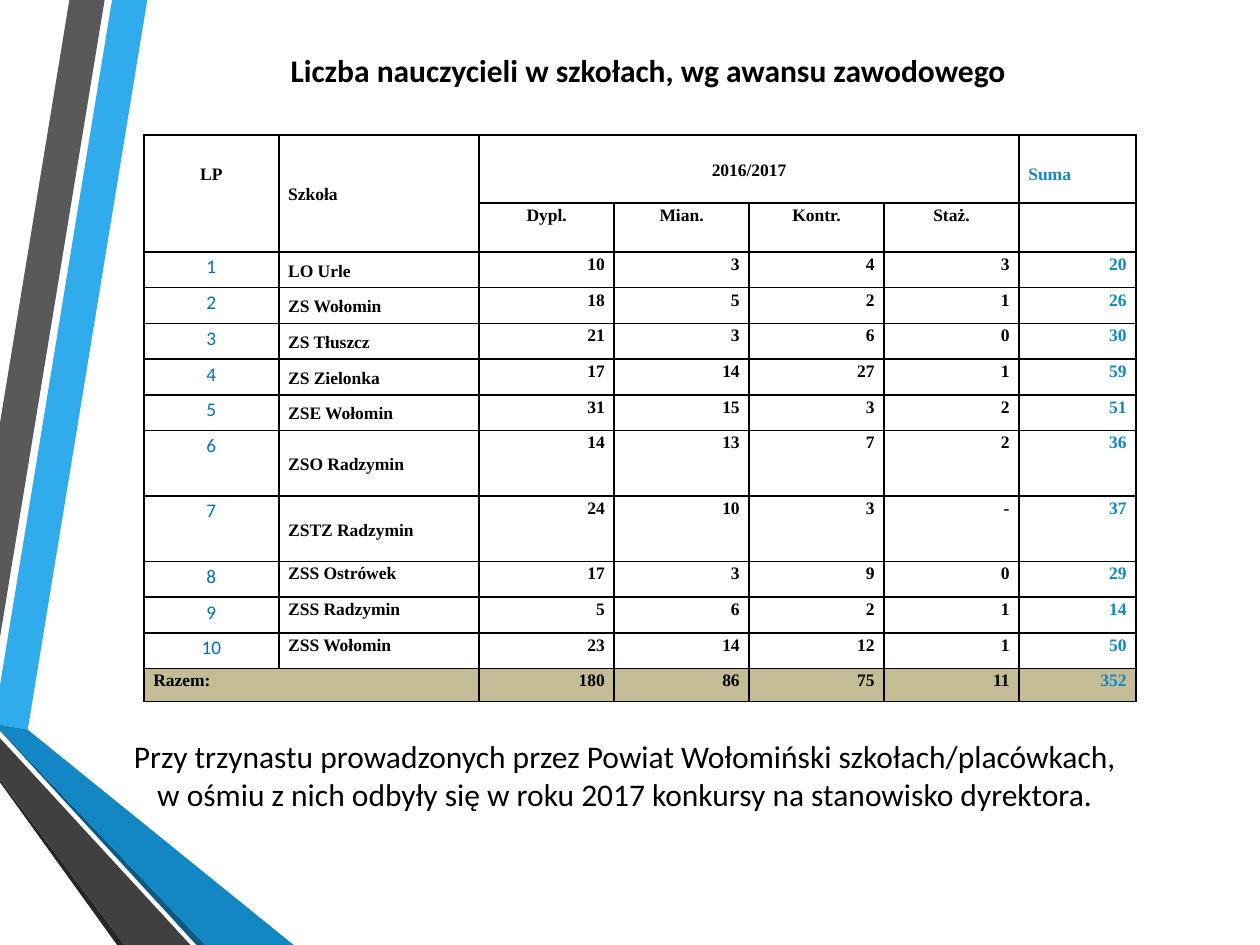
from lxml.etree import SubElement
from pptx import Presentation
from pptx.dml.color import RGBColor
from pptx.enum.text import MSO_ANCHOR, PP_ALIGN
from pptx.oxml.ns import qn
from pptx.util import Cm, Pt

# Content
TITLE = "Liczba nauczycieli w szkołach, wg awansu zawodowego"
NOTE = ("Przy trzynastu prowadzonych przez Powiat Wołomiński szkołach/placówkach,\v"
        "w ośmiu z nich odbyły się w roku 2017 konkursy na stanowisko dyrektora.")
YEAR = "2016/2017"
RANKS = ["Dypl.", "Mian.", "Kontr.", "Staż."]
SCHOOLS = [
    ("LO Urle", 10, 3, 4, 3, 20),
    ("ZS Wołomin", 18, 5, 2, 1, 26),
    ("ZS Tłuszcz", 21, 3, 6, 0, 30),
    ("ZS Zielonka", 17, 14, 27, 1, 59),
    ("ZSE Wołomin", 31, 15, 3, 2, 51),
    ("ZSO Radzymin", 14, 13, 7, 2, 36),
    ("ZSTZ Radzymin", 24, 10, 3, "-", 37),
    ("ZSS Ostrówek", 17, 3, 9, 0, 29),
    ("ZSS Radzymin", 5, 6, 2, 1, 14),
    ("ZSS Wołomin", 23, 14, 12, 1, 50),
]
TOTALS = (180, 86, 75, 11, 352)

# Side ribbons: colour and corner points in cm
RIBBONS = [
    ("30ACEC", [(0, 13.82), (0, 14.61), (0.56, 14.71), (2.97, 0), (2.26, 0)]),
    ("595959", [(2.11, 0), (1.4, 0), (0, 8.53), (0, 12.85)]),
    ("262626", [(0, 15.72), (0, 15.77), (2.36, 19.05), (2.51, 19.05)]),
    ("0C5A82", [(0, 14.71), (0, 14.73), (3.96, 19.05), (4.14, 19.05)]),
    ("1287C3", [(0, 14.71), (4.14, 19.05), (5.92, 19.05), (0.56, 14.71), (0, 14.61)]),
    ("404040", [(0, 15.72), (2.51, 19.05), (3.84, 19.05), (0, 14.88)]),
]

COLS = [2.72, 4.04] + [2.72] * 4 + [2.36]
ROWS = [1.37, 0.91] + [0.72] * 5 + [1.32] * 2 + [0.72] * 3 + [0.66]
BLACK, BLUE, NUMBER_BLUE, SAND = "000000", "1287C3", "0070C0", "C4BC96"
LEFT, CENTER, RIGHT = PP_ALIGN.LEFT, PP_ALIGN.CENTER, PP_ALIGN.RIGHT


def rgb(value):
    return RGBColor.from_string(value)


def write(tf, text, size=10, font="Times New Roman", color=BLACK, bold=True,
          align=LEFT, spacing=1.15):
    p = tf.paragraphs[0]
    p.text = str(text)
    p.alignment = align
    p.line_spacing = spacing
    for r in p.runs:
        r.font.size = Pt(size)
        r.font.name = font
        r.font.bold = bold
        r.font.color.rgb = rgb(color)


def add_ribbon(s, color, points):
    corners = [(Cm(x), Cm(y)) for x, y in points]
    builder = s.shapes.build_freeform(*corners[0])
    builder.add_line_segments(corners[1:], close=True)
    sp = builder.convert_to_shape()
    sp.fill.solid()
    sp.fill.fore_color.rgb = rgb(color)
    sp.line.fill.background()
    sp.shadow.inherit = False


def add_text(s, left, top, width, height, text, **fmt):
    sp = s.shapes.add_textbox(Cm(left), Cm(top), Cm(width), Cm(height))
    sp.text_frame.word_wrap = True
    write(sp.text_frame, text, size=18, font="Calibri", align=CENTER, spacing=1.0, **fmt)


def style_cell(cell, fill=None):
    cell.margin_left = cell.margin_right = Cm(0.19)
    cell.margin_top = cell.margin_bottom = 0
    tc_pr = cell._tc.get_or_add_tcPr()
    for side in ("a:lnL", "a:lnR", "a:lnT", "a:lnB"):
        ln = SubElement(tc_pr, qn(side), w=str(Pt(1)))
        solid = SubElement(ln, qn("a:solidFill"))
        SubElement(solid, qn("a:srgbClr"), val=BLACK)
    if fill:
        cell.fill.solid()
        cell.fill.fore_color.rgb = rgb(fill)
    else:
        cell.fill.background()


def add_staff_table(s):
    frame = s.shapes.add_table(len(ROWS), len(COLS), Cm(2.9), Cm(2.72),
                               Cm(sum(COLS)), Cm(sum(ROWS)))
    table = frame.table
    table.first_row = table.horz_banding = False
    for column, width in zip(table.columns, COLS):
        column.width = Cm(width)
    for row, height in zip(table.rows, ROWS):
        row.height = Cm(height)
    last = len(ROWS) - 1
    for i in range(len(ROWS)):
        for j in range(len(COLS)):
            style_cell(table.cell(i, j), SAND if i == last else None)

    def put(i, j, text, anchor=MSO_ANCHOR.TOP, **fmt):
        cell = table.cell(i, j)
        cell.vertical_anchor = anchor
        write(cell.text_frame, text, **fmt)
        return cell

    def put_counts(i, counts):
        for j, count in enumerate(counts, 2):
            color = BLUE if j == len(COLS) - 1 else BLACK
            put(i, j, count, align=RIGHT, color=color)

    # Header
    for first, end in (((0, 0), (1, 0)), ((0, 1), (1, 1)), ((0, 2), (0, 5)),
                       ((last, 0), (last, 1))):
        table.cell(*first).merge(table.cell(*end))
    put(0, 0, "LP", align=CENTER).margin_top = Cm(0.54)
    put(0, 1, "Szkoła", MSO_ANCHOR.MIDDLE)
    put(0, 2, YEAR, MSO_ANCHOR.MIDDLE, align=CENTER)
    put(0, 6, "Suma", color=BLUE).margin_top = Cm(0.54)
    for j, rank in enumerate(RANKS, 2):
        put(1, j, rank, align=CENTER)

    # Schools, the last three names at the top of their cells
    for number, (name, *counts) in enumerate(SCHOOLS, 1):
        i = number + 1
        put(i, 0, number, size=11, font="Calibri", color=NUMBER_BLUE,
            bold=False, align=CENTER)
        put(i, 1, name, MSO_ANCHOR.MIDDLE if number < 8 else MSO_ANCHOR.TOP)
        put_counts(i, counts)

    # Totals
    put(last, 0, "Razem:")
    put_counts(last, TOTALS)


def main():
    prs = Presentation()
    prs.slide_width, prs.slide_height = Cm(25.4), Cm(19.05)
    s = prs.slides.add_slide(prs.slide_layouts[6])
    for color, points in RIBBONS:
        add_ribbon(s, color, points)
    add_staff_table(s)
    add_text(s, 2.77, 0.91, 20.6, 1.02, TITLE)
    add_text(s, 1.3, 14.73, 22.6, 1.8, NOTE, bold=False)
    prs.save("out.pptx")


if __name__ == "__main__":
    main()
